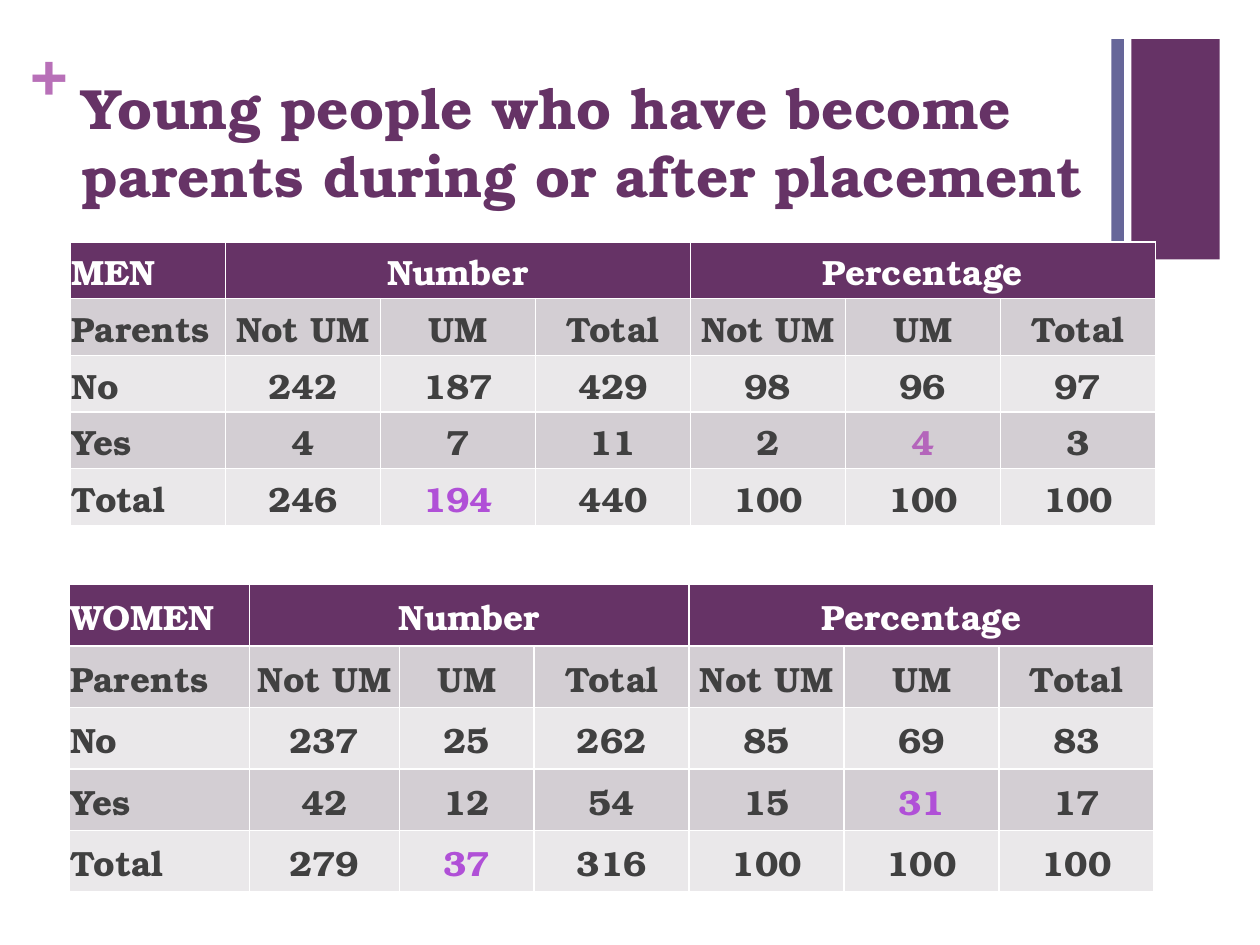
import dataclasses
import pptx
import pptx.util
import pptx.dml.color
import pptx.enum.shapes
import pptx.enum.text

Inches = pptx.util.Inches
Align = pptx.enum.text.PP_ALIGN
Anchor = pptx.enum.text.MSO_ANCHOR


@dataclasses.dataclass(frozen=True)
class Theme:
    """Colours, font and type sizes of the slide."""
    font: str = "TeX Gyre Bonum"
    plum: str = "663366"
    slate: str = "666699"
    plus: str = "B870B8"
    white: str = "FFFFFF"
    ink: str = "404040"
    dark: str = "D3CED3"
    light: str = "EAE8EA"
    mark: str = "B050D7"
    soft: str = "B465BB"
    head: float = 32.4
    sign: float = 36
    body: float = 20


THEME = Theme()
HEADS = ["Not UM", "UM", "Total"]
MEN = [
    ["No", 242, 187, 429, 98, 96, 97],
    ["Yes", 4, 7, 11, 2, 4, 3],
    ["Total", 246, 194, 440, 100, 100, 100],
]
WOMEN = [
    ["No", 237, 25, 262, 85, 69, 83],
    ["Yes", 42, 12, 54, 15, 31, 17],
    ["Total", 279, 37, 316, 100, 100, 100],
]


def rgb(code):
    """Turn a hex code into a colour."""
    return pptx.dml.color.RGBColor.from_string(code)


def apply(item, form):
    """Set each attribute named in a dict of format values."""
    for name, value in form.items():
        setattr(item, name, value)


def write(frame, text, size, tint, align=Align.LEFT):
    """Write one bold paragraph into a text frame."""
    para = frame.paragraphs[0]
    para.alignment = align
    run = para.add_run()
    run.text = text
    apply(run.font, {"name": THEME.font, "size": pptx.util.Pt(size), "bold": True})
    run.font.color.rgb = rgb(tint)


def add_title(slide, box, text):
    """Place and format the title."""
    title = slide.shapes.title
    apply(title, dict(zip(("left", "top", "width", "height"), map(Inches, box))))
    apply(title.text_frame, {
        "word_wrap": True,
        "vertical_anchor": Anchor.TOP,
        "auto_size": pptx.enum.text.MSO_AUTO_SIZE.NONE,
    })
    write(title.text_frame, text, THEME.head, THEME.plum)


def add_plus(slide, box):
    """Place the plus sign beside the title."""
    frame = slide.shapes.add_textbox(*map(Inches, box)).text_frame
    edges = ("margin_left", "margin_top", "margin_right", "margin_bottom")
    apply(frame, {**dict.fromkeys(edges, 0), "word_wrap": True})
    write(frame, "+", THEME.sign, THEME.plus)


def add_bars(slide, box):
    """Place a thin and a wide bar in the corner box."""
    left, top, width, height = box
    thin, gap = 0.1, 0.06
    start = thin + gap
    for shift, span, tint in ((0, thin, THEME.slate), (start, width - start, THEME.plum)):
        bar = slide.shapes.add_shape(
            pptx.enum.shapes.MSO_SHAPE.RECTANGLE,
            Inches(left + shift), Inches(top), Inches(span), Inches(height))
        bar.shadow.inherit = False
        bar.fill.solid()
        bar.fill.fore_color.rgb = rgb(tint)
        bar.line.fill.background()


def add_grid(slide, box, group, data, widths, marks):
    """Place one group's table, with marked cells in their own colours."""
    rows = [[group, "Number", "", "", "Percentage", "", ""],
            ["Parents", *HEADS, *HEADS], *data]
    grid = slide.shapes.add_table(len(rows), len(widths), *map(Inches, box)).table
    for col, width in zip(grid.columns, widths):
        col.width = Inches(width)
    for start in (1, 4):
        grid.cell(0, start).merge(grid.cell(0, start + 2))
    pad = Inches(0.01)
    form = {"margin_left": pad, "margin_top": pad, "margin_right": pad,
            "margin_bottom": 0, "vertical_anchor": Anchor.MIDDLE}
    for r, row in enumerate(rows):
        grid.rows[r].height = Inches(box[3] / len(rows))
        fill = THEME.plum if r == 0 else THEME.dark if r % 2 else THEME.light
        ink = THEME.ink if r else THEME.white
        for c, value in enumerate(row):
            cell = grid.cell(r, c)
            apply(cell, form)
            cell.fill.solid()
            cell.fill.fore_color.rgb = rgb(fill)
            if not cell.is_spanned:
                write(cell.text_frame, str(value), THEME.body,
                      marks.get((r, c), ink), Align.CENTER if c else Align.LEFT)


def main():
    """Build and save the slide."""
    deck = pptx.Presentation()
    apply(deck, {"slide_width": Inches(10), "slide_height": Inches(7.5)})
    slide = deck.slides.add_slide(deck.slide_layouts[5])
    add_bars(slide, (8.82, 0.31, 0.86, 1.75))
    add_plus(slide, (0.24, 0.25, 0.29, 0.61))
    add_title(slide, (0.55, 0.53, 8.26, 1.72),
              "Young people who have become parents during or after placement")
    add_grid(slide, (0.55, 4.64, 8.62, 2.44), "WOMEN", WOMEN,
             [1.43, 1.19, 1.07] + [1.23] * 4,
             {(3, 5): THEME.mark, (4, 2): THEME.mark})
    add_grid(slide, (0.56, 1.92, 8.6, 2.25), "MEN", MEN, [1.23] * 7,
             {(3, 5): THEME.soft, (4, 2): THEME.mark})
    deck.save("out.pptx")


if __name__ == "__main__":
    main()
